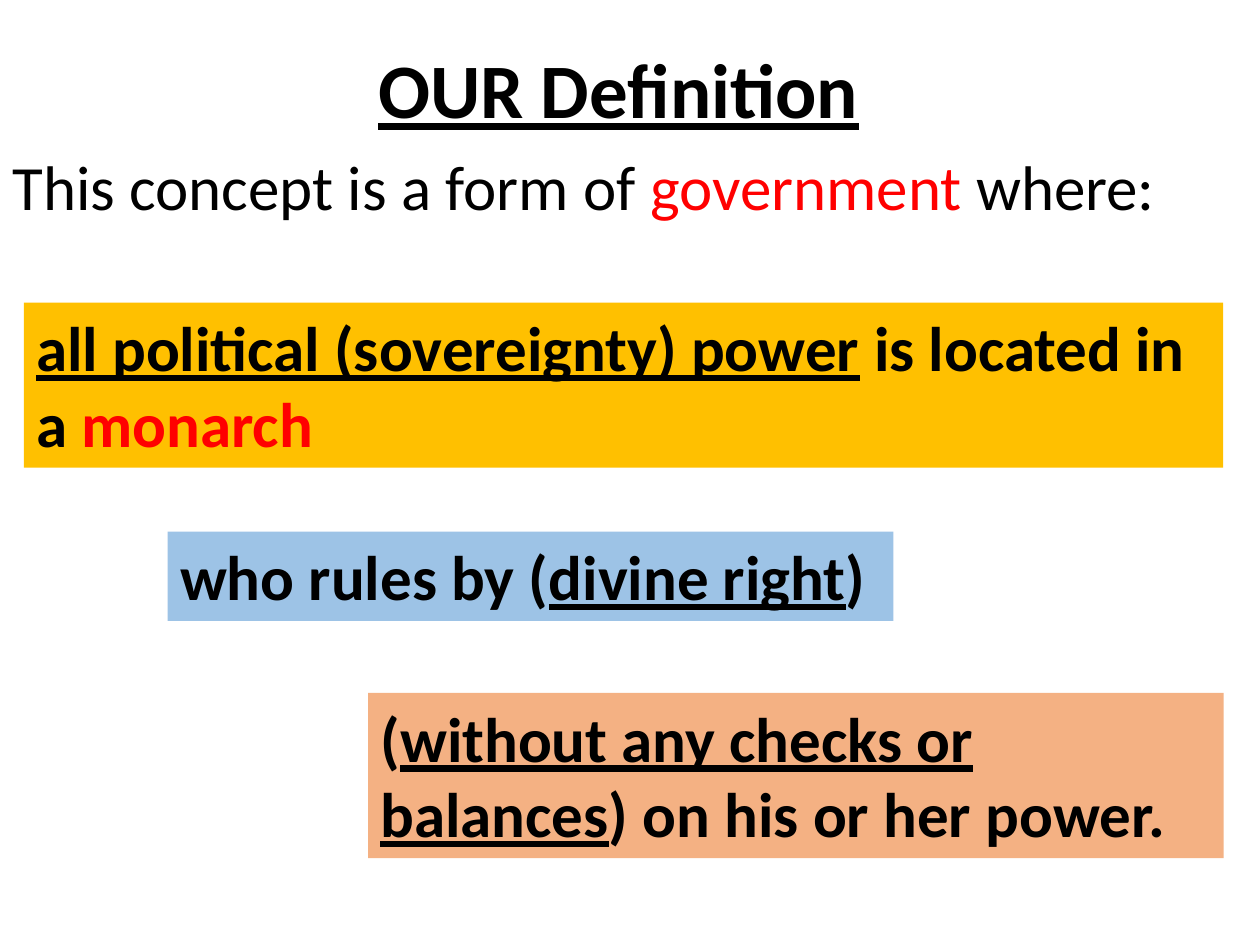
from pptx import Presentation
from pptx.dml.color import RGBColor
from pptx.enum.text import MSO_ANCHOR, MSO_AUTO_SIZE, PP_ALIGN
from pptx.util import Cm, Pt

MIDDLE, TOP = MSO_ANCHOR.MIDDLE, MSO_ANCHOR.TOP
CENTER, LEFT = PP_ALIGN.CENTER, PP_ALIGN.LEFT
GROW, FIXED = MSO_AUTO_SIZE.SHAPE_TO_FIT_TEXT, MSO_AUTO_SIZE.NONE
BLACK, RED = "000000", "FF0000"
GOLD, BLUE, PEACH = "FFC000", "9DC3E6", "F4B183"
WIDTH, HEIGHT = 25.4, 19.05


def paint(color, value):
    color.rgb = RGBColor.from_string(value)


def add_run(para, text, size=36, color=BLACK, bold=False, line=False):
    run = para.add_run()
    run.text = text
    font = run.font
    font.name, font.size = "Calibri", Pt(size)
    font.bold, font.underline = bold, line
    paint(font.color, color)


def set_frame(shape, anchor=TOP, align=LEFT, fit=FIXED):
    """Format the text frame and return its first paragraph."""
    frame = shape.text_frame
    frame.word_wrap = True
    frame.auto_size = fit
    frame.vertical_anchor = anchor
    para = frame.paragraphs[0]
    para.alignment = align
    return para


def add_title(slide):
    title = slide.shapes.title
    title.left, title.top = Cm(0), Cm(0.05)
    title.width, title.height = Cm(WIDTH), Cm(3.68)
    para = set_frame(title, MIDDLE, CENTER)
    para.line_spacing = 0.9
    add_run(para, "OUR Definition", size=44, bold=True, line=True)
    add_run(para, "\t", size=40, bold=True)


def add_box(slide, left, top, width, height):
    return slide.shapes.add_textbox(Cm(left), Cm(top), Cm(width), Cm(height))


def add_intro(slide):
    para = set_frame(add_box(slide, 0, 3.02, WIDTH, 3.07))
    para.line_spacing, para.space_before = 0.9, Pt(7.5)
    add_run(para, "This concept is a form of ")
    add_run(para, "government", color=RED)
    add_run(para, " where:")


def add_card(slide, place, fill, parts):
    """Add a filled box of bold text; parts pairs each text with its format."""
    card = add_box(slide, *place)
    card.fill.solid()
    paint(card.fill.fore_color, fill)
    para = set_frame(card, fit=GROW)
    for text, style in parts:
        add_run(para, text, bold=True, **style)


def main():
    deck = Presentation()
    deck.slide_width, deck.slide_height = Cm(WIDTH), Cm(HEIGHT)
    slide = deck.slides.add_slide(deck.slide_layouts[5])
    plain, under, red = {}, {"line": True}, {"color": RED}

    add_title(slide)
    add_intro(slide)
    add_card(slide, (7.42, 13.97, 17.25, 3.33), PEACH, [
        ("(", plain),
        ("without any checks or balances", under),
        (") on his or her power.", plain)])
    add_card(slide, (0.48, 6.1, 24.18, 3.33), GOLD, [
        ("all political (sovereignty) power", under),
        (" is located in a ", plain),
        ("monarch", red)])
    add_card(slide, (3.38, 10.72, 14.63, 1.8), BLUE, [
        ("who rules by (", plain),
        ("divine right", under),
        (")", plain)])
    deck.save("out.pptx")


if __name__ == "__main__":
    main()
